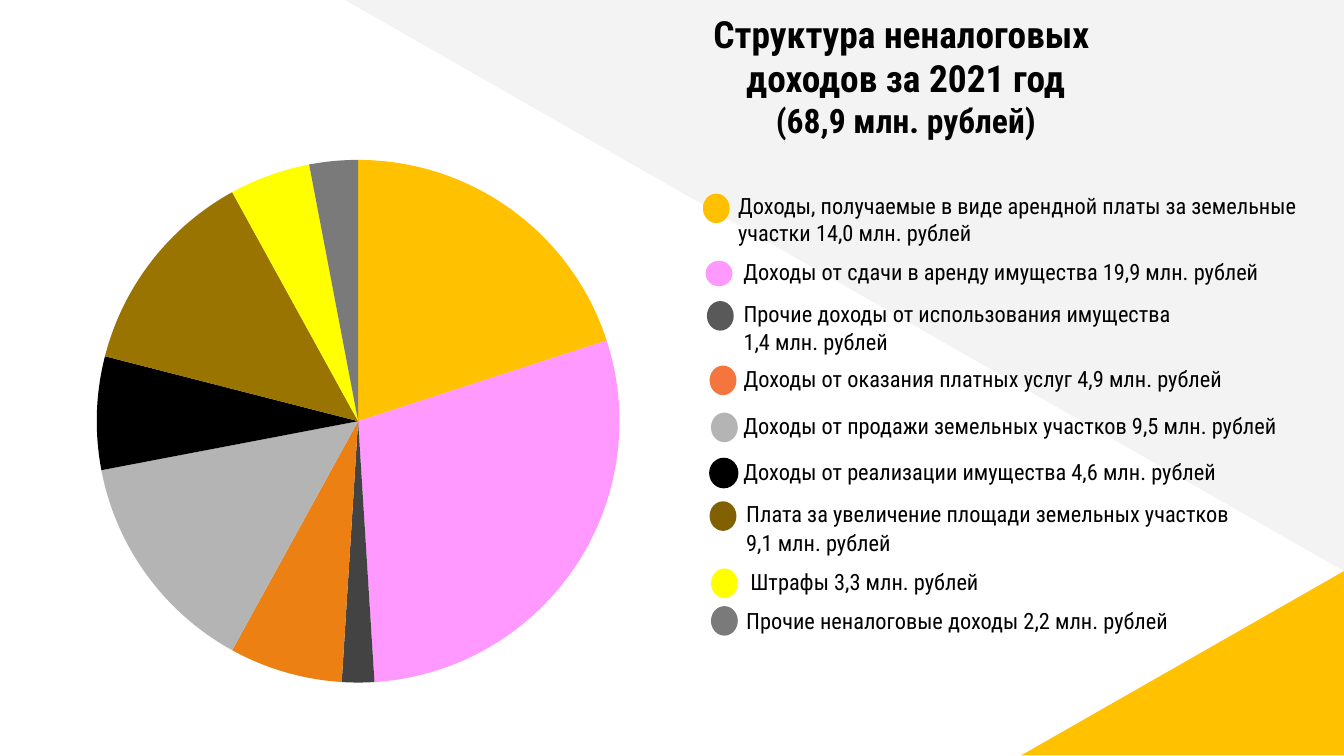
from pptx import Presentation
from pptx.chart.data import CategoryChartData
from pptx.dml.color import RGBColor
from pptx.enum.chart import XL_CHART_TYPE as ChartType
from pptx.enum.shapes import MSO_SHAPE as Shape
from pptx.enum.text import MSO_ANCHOR as Anchor, PP_ALIGN as Align
from pptx.util import Inches, Pt
from lxml import etree

FONT = "Roboto Condensed"
BLACK = RGBColor(0, 0, 0)
PALE_GRAY = RGBColor(0xF3, 0xF3, 0xF3)
AMBER = RGBColor(0xFF, 0xC1, 0x00)

TITLE_LINES = [("Структура неналоговых ", 20), ("доходов за 2021 год", 20),
               ("(68,9 млн. рублей)", 18)]

# share in percent, slice colour
SLICES = [(20, "FFC100"), (29, "FF99FF"), (2, "434343"), (7, "ED8013"), (14, "B4B4B4"),
          (7, "000000"), (13, "997400"), (5, "FFFF00"), (3, "7A7A7A")]
CHART_BOX = (0.15, 1.05, 5.04, 4.16)
PIE_LEFT, PIE_TOP, PIE_DIAMETER = 0.57, 0.14, 3.89  # inside the chart frame

# lines, text box (left, top, width, height), marker (left, top, width, height), marker colour
LEGEND = [
    (["Доходы, получаемые в виде арендной платы за земельные участки 14,0 млн. рублей"],
     (5.38, 1.33, 4.75, 0.62), (5.23, 1.44, 0.2, 0.22), "FFC000"),
    (["Доходы от сдачи в аренду имущества 19,9 млн. рублей"],
     (5.42, 1.82, 4.36, 0.42), (5.25, 1.94, 0.2, 0.19), "FF99FF"),
    (["Прочие доходы от использования имущества", "1,4 млн. рублей"],
     (5.42, 2.13, 4.49, 0.63), (5.26, 2.24, 0.2, 0.22), "595959"),
    (["Доходы от оказания платных услуг 4,9 млн. рублей"],
     (5.42, 2.62, 4.31, 0.42), (5.28, 2.72, 0.2, 0.22), "F4763E"),
    (["Доходы от продажи земельных участков 9,5 млн. рублей"],
     (5.42, 2.97, 4.36, 0.42), (5.29, 3.07, 0.2, 0.22), "B4B4B4"),
    (["Доходы от реализации имущества 4,6 млн. рублей"],
     (5.42, 3.31, 4.3, 0.42), (5.29, 3.42, 0.19, 0.2), "000000"),
    (["Плата за увеличение площади земельных участков", "9,1 млн. рублей"],
     (5.44, 3.62, 4.32, 0.63), (5.28, 3.73, 0.2, 0.22), "806000"),
    (["Штрафы 3,3 млн. рублей"],
     (5.47, 4.13, 3.01, 0.42), (5.29, 4.23, 0.2, 0.22), "FFFF00"),
    (["Прочие неналоговые доходы 2,2 млн. рублей"],
     (5.44, 4.42, 4.26, 0.42), (5.29, 4.51, 0.2, 0.22), "7A7A7A"),
]


def inches(box):
    return [Inches(value) for value in box]


def add_filled(slide, preset, box, color):
    shape = slide.shapes.add_shape(preset, *inches(box))
    shape.shadow.inherit = False
    shape.fill.solid()
    shape.fill.fore_color.rgb = color
    shape.line.fill.background()
    return shape


def set_frame(frame):
    frame.word_wrap = True
    frame.vertical_anchor = Anchor.TOP
    frame.margin_left = frame.margin_right = Inches(0.1)
    frame.margin_top = frame.margin_bottom = Inches(0.1)


def set_font(font, size, bold=False):
    font.name = FONT
    font.size = Pt(size)
    font.bold = bold
    font.color.rgb = BLACK


def add_background(slide):
    add_filled(slide, Shape.RIGHT_TRIANGLE, (2.55, -0.01, 7.45, 4.26), PALE_GRAY).rotation = 180
    corner = add_filled(slide, Shape.RIGHT_TRIANGLE, (7.6, 4.25, 2.4, 1.37), AMBER)
    corner._element.spPr.xfrm.set("flipH", "1")


def set_title(slide):
    title = slide.shapes.title
    title.left, title.top, title.width, title.height = inches((2.31, -0.02, 8.86, 0.63))
    frame = title.text_frame
    set_frame(frame)
    frame.text = "\v".join(text for text, _ in TITLE_LINES)
    paragraph = frame.paragraphs[0]
    paragraph.alignment = Align.CENTER
    for run, (_, size) in zip(paragraph.runs, TITLE_LINES):
        set_font(run.font, size, bold=True)


def add_pie(slide):
    data = CategoryChartData()
    data.categories = [str(number) for number in range(1, len(SLICES) + 1)]
    data.add_series("Series 1", [share for share, _ in SLICES])
    chart = slide.shapes.add_chart(ChartType.PIE, *inches(CHART_BOX), data).chart
    chart.has_legend = chart.has_title = False
    chart.font.name = "Arial"
    chart.font.size = Pt(10)
    chart.font.color.rgb = BLACK
    plot = chart.plots[0]
    plot.vary_by_categories = True
    for index, (_, color) in enumerate(SLICES):
        point = plot.series[0].points[index]
        point.format.fill.solid()
        point.format.fill.fore_color.rgb = RGBColor.from_string(color)
        point.format.line.fill.background()
    _, _, width, height = CHART_BOX
    set_plot_area(chart, x=PIE_LEFT / width, y=PIE_TOP / height,
                  w=PIE_DIAMETER / width, h=PIE_DIAMETER / height)


def set_plot_area(chart, **fractions):
    """Fix the inner plot area, in fractions of the chart frame."""
    plot_area = chart._chartSpace.chart.plotArea
    namespace = "{%s}" % plot_area.nsmap["c"]
    for old in plot_area.findall(namespace + "layout"):
        plot_area.remove(old)
    layout = etree.Element(namespace + "layout")
    manual = etree.SubElement(layout, namespace + "manualLayout")
    settings = {"layoutTarget": "inner", "xMode": "edge", "yMode": "edge", **fractions}
    for name, value in settings.items():
        etree.SubElement(manual, namespace + name).set("val", str(value))
    plot_area.insert(0, layout)


def add_legend(slide):
    for lines, text_box, marker_box, color in LEGEND:
        frame = slide.shapes.add_textbox(*inches(text_box)).text_frame
        set_frame(frame)
        frame.text = "\n".join(lines)
        for index, paragraph in enumerate(frame.paragraphs):
            paragraph._p.get_or_add_pPr().set("marL", str(Pt(1)))
            if index:
                paragraph.space_before = Pt(1)
            set_font(paragraph.runs[0].font, 12)
        marker = add_filled(slide, Shape.OVAL, marker_box, RGBColor.from_string(color))
        if color == "000000":
            marker.line.color.rgb = BLACK
            marker.line.width = Pt(2)


def main():
    presentation = Presentation()
    presentation.slide_width = Inches(10)
    presentation.slide_height = presentation.slide_width * 9 // 16
    slide = presentation.slides.add_slide(presentation.slide_layouts[5])
    add_background(slide)
    set_title(slide)
    add_pie(slide)
    add_legend(slide)
    # The title stands in front of the background triangles.
    slide.shapes._spTree.append(slide.shapes.title._element)
    presentation.save("out.pptx")


if __name__ == "__main__":
    main()
